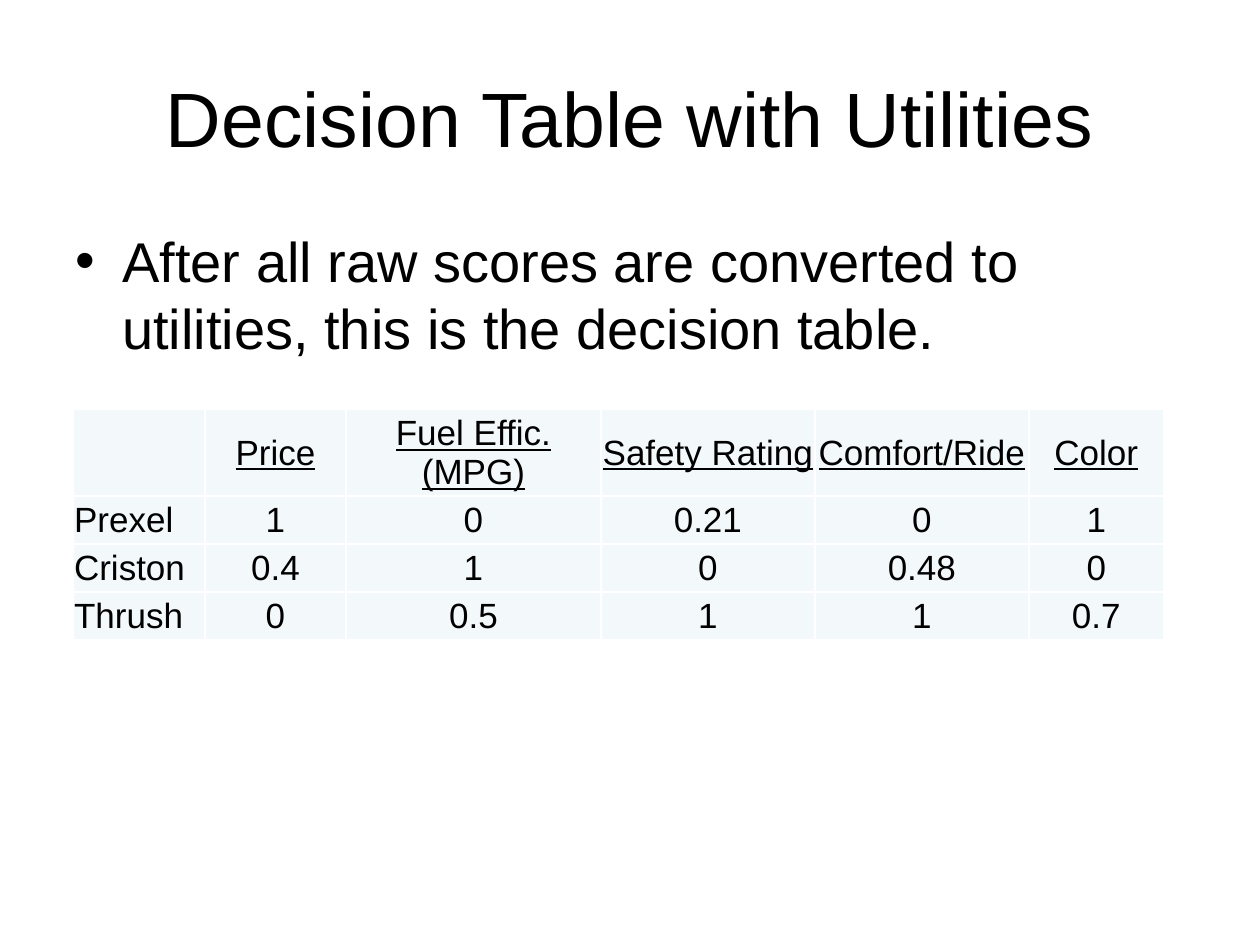
import dataclasses
import itertools
import typing

import pptx
import pptx.dml.color
import pptx.enum.text
import pptx.oxml
import pptx.oxml.ns
import pptx.util

SCALE = 914400 / 126
ALIGN = pptx.enum.text.PP_ALIGN
ANCHOR = pptx.enum.text.MSO_ANCHOR


@dataclasses.dataclass(frozen=True)
class Theme:
    font: str = "Arial"
    ink: str = "000000"
    cell: str = "F3F9FA"
    rule: str = "FFFFFF"
    title: int = 44
    body: int = 32
    grid: int = 20


class Box(typing.NamedTuple):
    left: int
    top: int
    width: int
    height: int


class Column(typing.NamedTuple):
    head: str
    width: int
    values: tuple[str, ...]
    align: ALIGN = ALIGN.CENTER


THEME = Theme()
COLUMNS = (
    Column("", 132, ("Prexel", "Criston", "Thrush"), ALIGN.LEFT),
    Column("Price", 141, ("1", "0.4", "0")),
    Column("Fuel Effic. (MPG)", 255, ("0", "1", "0.5")),
    Column("Safety Rating", 214, ("0.21", "0", "1")),
    Column("Comfort/Ride", 214, ("0", "0.48", "1")),
    Column("Color", 135, ("1", "0", "0.7")),
)
ROWS = (87, 48, 48, 48)


def px(count: int) -> pptx.util.Emu:
    return pptx.util.Emu(round(count * SCALE))


def color(code: str) -> pptx.dml.color.RGBColor:
    return pptx.dml.color.RGBColor.from_string(code)


def write(frame, text: str, *, size: int, align=ALIGN.LEFT, line: bool = False):
    para = frame.paragraphs[0]
    para.alignment = align
    para.font.size = pptx.util.Pt(size)
    if text:
        run = para.add_run()
        run.text = text
        run.font.name = THEME.font
        run.font.size = pptx.util.Pt(size)
        run.font.underline = line
        run.font.color.rgb = color(THEME.ink)
    return para


def add_text(slide, box: Box, text: str, *, anchor=ANCHOR.TOP, **form):
    frame = slide.shapes.add_textbox(*map(px, box)).text_frame
    frame.word_wrap = True
    frame.vertical_anchor = anchor
    return write(frame, text, **form)


def add_bullet(para, indent: int) -> None:
    props = para._p.get_or_add_pPr()
    props.set("marL", str(px(indent)))
    props.set("indent", str(-px(indent)))
    space = pptx.oxml.ns.nsdecls("a")
    for tag in (f'<a:buFont {space} typeface="{THEME.font}"/>', f'<a:buChar {space} char="•"/>'):
        props.insert_element_before(
            pptx.oxml.parse_xml(tag), "a:tabLst", "a:defRPr", "a:extLst"
        )


def add_rules(cell) -> None:
    props = cell._tc.get_or_add_tcPr()
    space = pptx.oxml.ns.nsdecls("a")
    for spot, side in enumerate("LRTB"):
        props.insert(spot, pptx.oxml.parse_xml(
            f'<a:ln{side} {space} w="{pptx.util.Pt(1)}"><a:solidFill>'
            f'<a:srgbClr val="{THEME.rule}"/></a:solidFill></a:ln{side}>'
        ))


def add_grid(slide, left: int, top: int) -> None:
    box = Box(left, top, sum(col.width for col in COLUMNS), sum(ROWS))
    table = slide.shapes.add_table(len(ROWS), len(COLUMNS), *map(px, box)).table
    for row, height in zip(table.rows, ROWS):
        row.height = px(height)
    for track, col in zip(table.columns, COLUMNS):
        track.width = px(col.width)
    for r, c in itertools.product(range(len(ROWS)), range(len(COLUMNS))):
        cell, col = table.cell(r, c), COLUMNS[c]
        cell.margin_left = cell.margin_right = cell.margin_top = px(1)
        cell.margin_bottom = 0
        cell.vertical_anchor = ANCHOR.MIDDLE
        cell.fill.solid()
        cell.fill.fore_color.rgb = color(THEME.cell)
        add_rules(cell)
        text = (col.head, *col.values)[r]
        write(cell.text_frame, text, size=THEME.grid, align=col.align, line=r == 0)


def main() -> None:
    deck = pptx.Presentation()
    deck.slide_width, deck.slide_height = px(1260), px(945)
    slide = deck.slides.add_slide(deck.slide_layouts[6])
    add_text(
        slide, Box(63, 38, 1134, 158), "Decision Table with Utilities",
        size=THEME.title, align=ALIGN.CENTER, anchor=ANCHOR.MIDDLE,
    )
    para = add_text(
        slide, Box(63, 220, 1144, 179),
        "After all raw scores are converted to utilities, this is the decision table.",
        size=THEME.body,
    )
    para.space_before = pptx.util.Pt(4)
    add_bullet(para, 47)
    add_grid(slide, 73, 409)
    deck.save("out.pptx")


if __name__ == "__main__":
    main()
